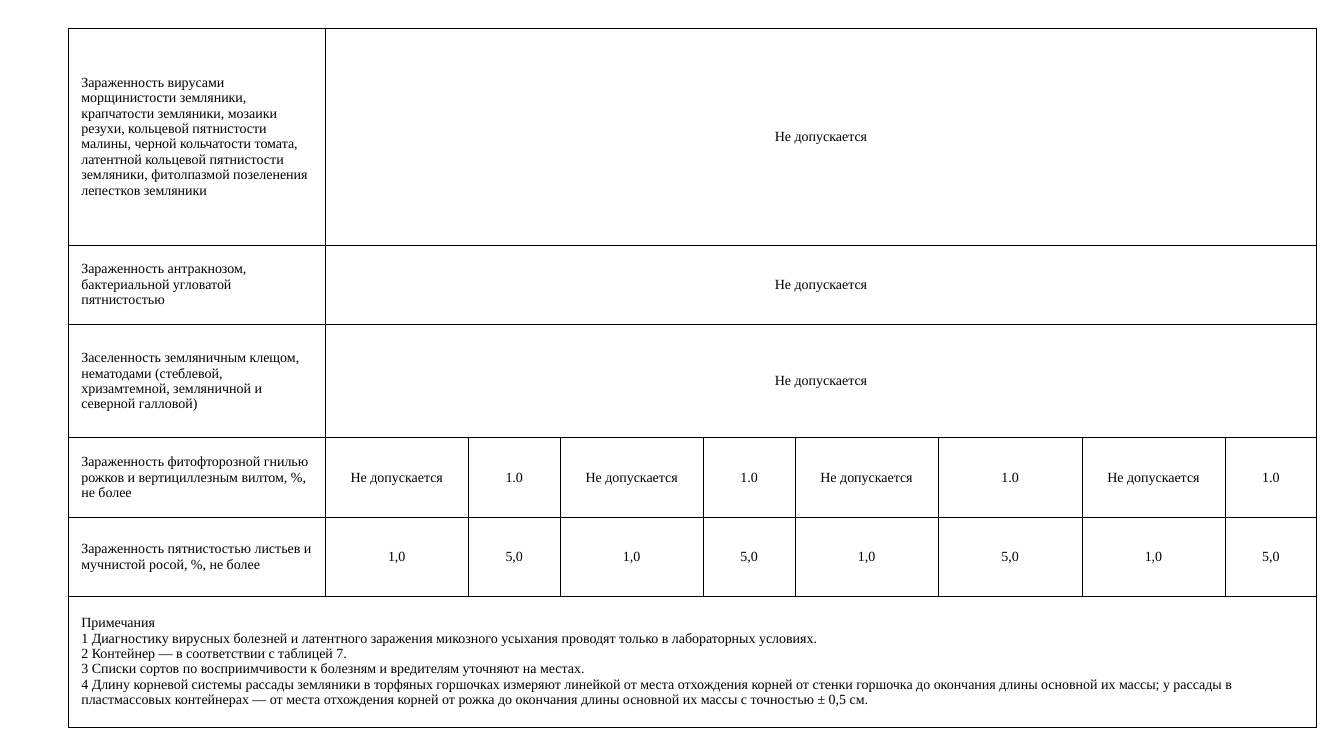
from pptx import Presentation
from pptx.dml.color import RGBColor
from pptx.enum.text import MSO_ANCHOR, PP_ALIGN
from pptx.oxml import parse_xml
from pptx.oxml.ns import nsdecls
from pptx.util import Pt

LEFT, CENTER, MIDDLE = PP_ALIGN.LEFT, PP_ALIGN.CENTER, MSO_ANCHOR.MIDDLE
BLACK = RGBColor(0, 0, 0)
BAN = "Не допускается"
NOTES = [
    "Примечания",
    "1 Диагностику вирусных болезней и латентного заражения микозного усыхания "
    "проводят только в лабораторных условиях.",
    "2 Контейнер — в соответствии с таблицей 7.",
    "3 Списки сортов по восприимчивости к болезням и вредителям уточняют на местах.",
    "4 Длину корневой системы рассады земляники в торфяных горшочках измеряют "
    "линейкой от места отхождения корней от стенки горшочка до окончания длины "
    "основной их массы; у рассады в пластмассовых контейнерах — от места отхождения "
    "корней от рожка до окончания длины основной их массы с точностью ± 0,5 см.",
]
# Each row: height, then its texts; the last text spans the columns left over
ROWS = [
    (155, ["Зараженность вирусами морщинистости земляники, крапчатости земляники, "
           "мозаики резухи, кольцевой пятнистости малины, черной кольчатости томата, "
           "латентной кольцевой пятнистости земляники, фитолпазмой позеленения "
           "лепестков земляники", BAN]),
    (56.5, ["Зараженность антракнозом, бактериальной угловатой пятнистостью", BAN]),
    (81.3, ["Заселенность земляничным клещом, нематодами (стеблевой, хризамтемной, "
            "земляничной и северной галловой)", BAN]),
    (56.5, ["Зараженность фитофторозной гнилью рожков и вертициллезным вилтом, %, "
            "не более"] + [BAN, "1.0"] * 4),
    (56.5, ["Зараженность пятнистостью листьев и мучнистой росой, %, "
            "не более"] + ["1,0", "5,0"] * 4),
    (93.5, ["\n".join(NOTES)]),
]
WIDE, SLIM = 102.2, 65.6
COLS = [183.6, WIDE, SLIM, WIDE, SLIM, WIDE, 102.8, WIDE, SLIM]
X, Y = 48.7, 20
FONT = {"name": "Times New Roman", "size": Pt(10), "bold": False}
CELL = {"vertical_anchor": MIDDLE, "margin_left": Pt(9.4), "margin_right": Pt(9.4),
        "margin_top": Pt(3.6), "margin_bottom": Pt(3.6)}


def put(item, form):
    for key, val in form.items():
        setattr(item, key, val)


def frame(cell):
    """Clear the fill and draw all four borders."""
    cell.fill.background()
    props = cell._tc.get_or_add_tcPr()
    for spot, side in enumerate(("lnL", "lnR", "lnT", "lnB")):
        props.insert(spot, parse_xml(
            f'<a:{side} {nsdecls("a")} w="{Pt(0.75)}"><a:solidFill>'
            f'<a:srgbClr val="{BLACK}"/></a:solidFill></a:{side}>'))


def write(cell, text, align):
    cell.text_frame.text = text
    for para in cell.text_frame.paragraphs:
        para.alignment = align
        for run in para.runs:
            put(run.font, FONT)
            run.font.color.rgb = BLACK


def main():
    deck = Presentation()
    deck.slide_width, deck.slide_height = Pt(960), Pt(540)
    slide = deck.slides.add_slide(deck.slide_layouts[6])
    high = sum(row[0] for row in ROWS)
    grid = slide.shapes.add_table(len(ROWS), len(COLS), Pt(X), Pt(Y),
                                  Pt(sum(COLS)), Pt(high)).table
    put(grid, {"first_row": False, "horz_banding": False})
    for col, width in zip(grid.columns, COLS):
        col.width = Pt(width)
    for r, (height, texts) in enumerate(ROWS):
        grid.rows[r].height = Pt(height)
        for cell in grid.rows[r].cells:
            put(cell, CELL)
            frame(cell)
        last = len(texts) - 1
        if last < len(COLS) - 1:
            grid.cell(r, last).merge(grid.cell(r, len(COLS) - 1))
        for c, text in enumerate(texts):
            write(grid.cell(r, c), text, CENTER if c else LEFT)
    deck.save("out.pptx")


if __name__ == "__main__":
    main()
